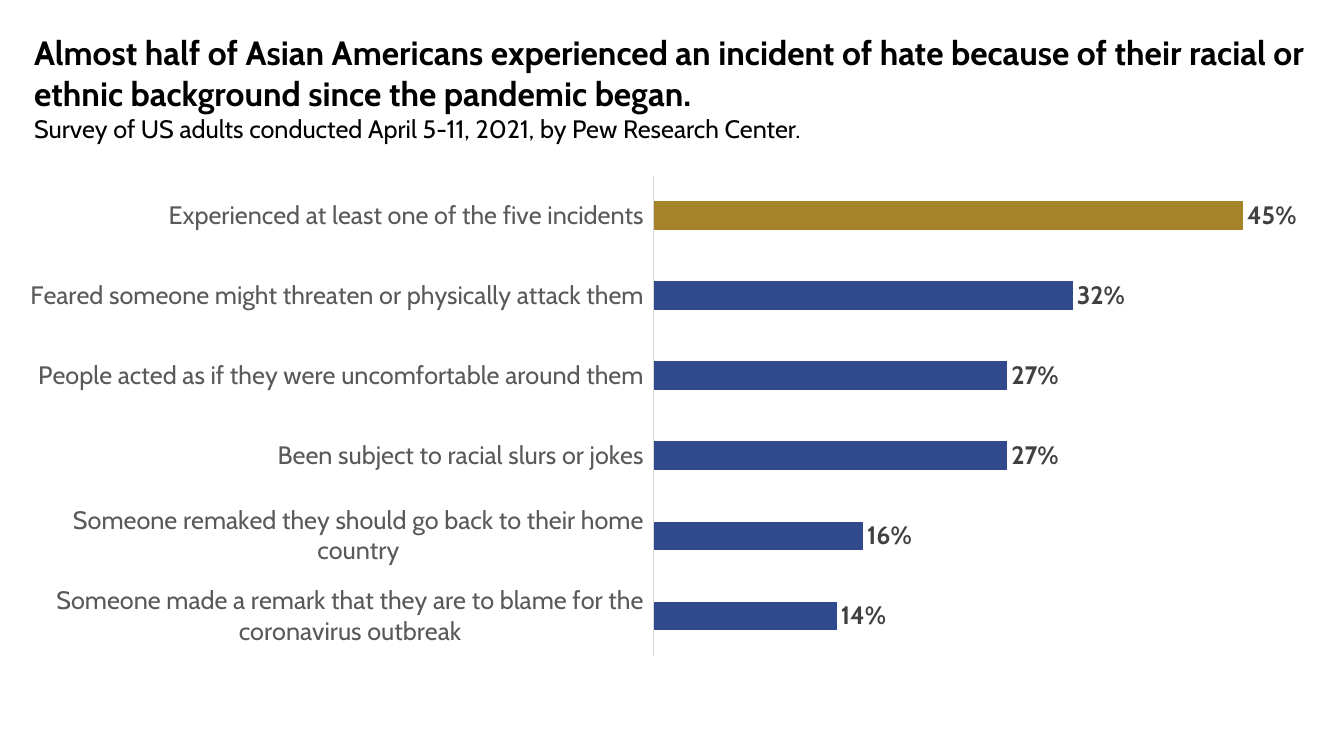
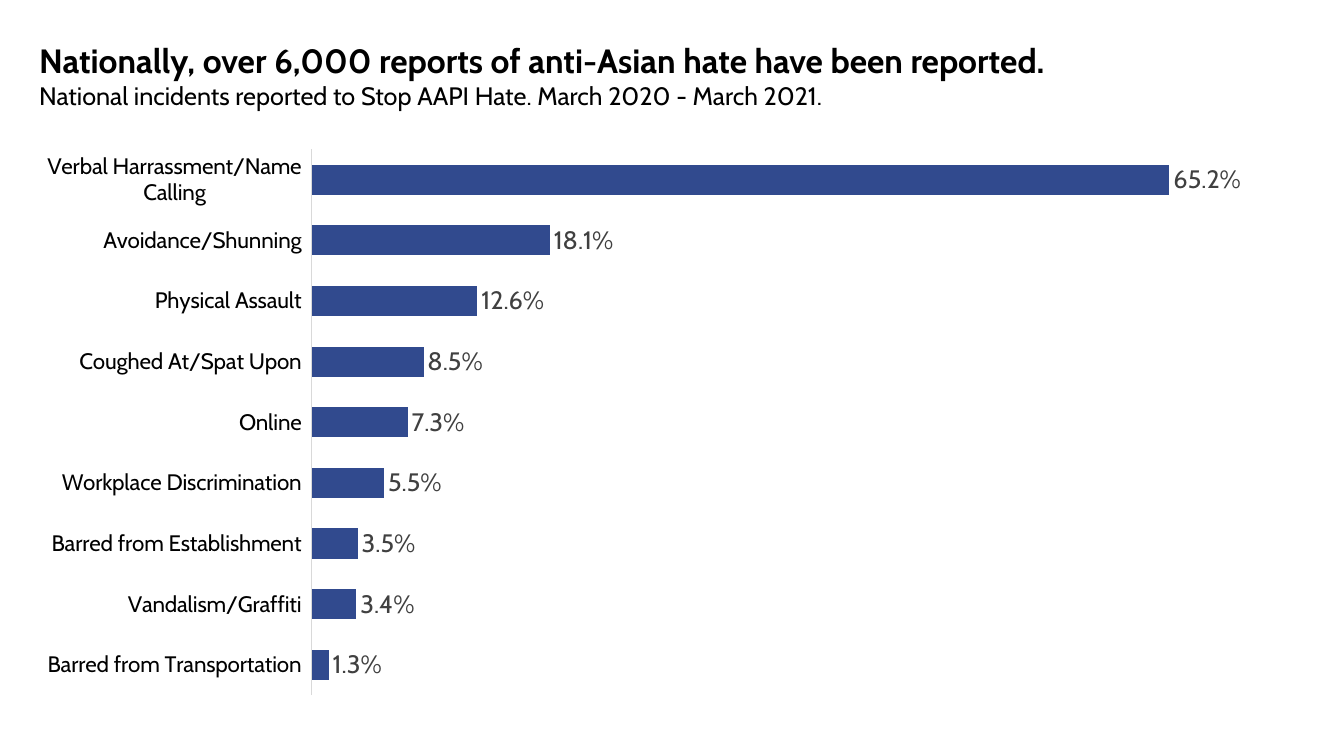
from pptx import Presentation
from pptx.chart.data import CategoryChartData as Data
from pptx.dml.color import RGBColor as RGB
from pptx.enum.chart import XL_CHART_TYPE as Kind
from pptx.enum.chart import XL_LABEL_POSITION as Spot
from pptx.enum.chart import XL_TICK_LABEL_POSITION as Place
from pptx.enum.chart import XL_TICK_MARK as Tick
from pptx.enum.text import MSO_ANCHOR as Anchor
from pptx.oxml import parse_xml
from pptx.oxml.ns import nsdecls, qn
from pptx.util import Inches, Pt

FONT = "Cabin"
COLORS = {
    "black": "000000",
    "gray": "595959",
    "label": "404040",
    "rule": "D9D9D9",
    "blue": "314A8E",
    "gold": "A58328",
}

HATE = [
    ("Experienced at least one of the five incidents", 0.45),
    ("Feared someone might threaten or physically attack them", 0.32),
    ("People acted as if they were uncomfortable around them", 0.27),
    ("Been subject to racial slurs or jokes", 0.27),
    ("Someone remaked they should go back to their home country", 0.16),
    ("Someone made a remark that they are to blame for the "
     "coronavirus outbreak", 0.14),
]
REPORTS = [
    ("Barred from Transportation", 0.013),
    ("Vandalism/Graffiti", 0.034),
    ("Barred from Establishment", 0.035),
    ("Workplace Discrimination", 0.055),
    ("Online", 0.073),
    ("Coughed At/Spat Upon", 0.085),
    ("Physical Assault", 0.126),
    ("Avoidance/Shunning", 0.181),
    ("Verbal Harrassment/Name Calling", 0.652),
]


def color(name):
    return RGB.from_string(COLORS[name])


def style(font, size, tone, bold=False):
    font.name, font.size, font.bold = FONT, Pt(size), bold
    font.color.rgb = color(tone)


def paint(fill, tone):
    fill.solid()
    fill.fore_color.rgb = color(tone)


def add_title(slide, box, head, sub):
    """Bold headline with a lighter source line, set on the box bottom."""
    frame = slide.shapes.add_textbox(*map(Inches, box)).text_frame
    frame.word_wrap = True
    frame.vertical_anchor = Anchor.BOTTOM
    para = frame.paragraphs[0]
    run = para.add_run()
    run.text = head
    style(run.font, 24, "black", True)
    para.add_line_break()
    run = para.add_run()
    run.text = sub
    style(run.font, 18, "black")


def set_plot(chart, plot):
    """Fix the inner plot area as x, y, w, h fractions of the chart."""
    area = chart.element.find(".//" + qn("c:plotArea"))
    for old in area.findall(qn("c:layout")):
        area.remove(old)
    modes = "".join(f'<c:{m}Mode val="edge"/>' for m in "xy")
    sizes = "".join(f'<c:{k} val="{v}"/>' for k, v in zip("xywh", plot))
    area.insert(0, parse_xml(
        f'<c:layout {nsdecls("c")}><c:manualLayout>'
        f'<c:layoutTarget val="inner"/>{modes}{sizes}'
        "</c:manualLayout></c:layout>"))


def add_bars(slide, box, rows, form, top, plot, gap, size, tone, bold=False):
    """Horizontal bars with value labels and no value axis."""
    data = Data(number_format=form)
    data.categories = [name for name, _ in rows]
    data.add_series("Series 1", [value for _, value in rows])
    chart = slide.shapes.add_chart(
        Kind.BAR_CLUSTERED, *map(Inches, box), data).chart
    chart.has_title = chart.has_legend = False
    style(chart.font, 10, "black")
    set_plot(chart, plot)

    # Axes
    cat, val = chart.category_axis, chart.value_axis
    cat.major_tick_mark = cat.minor_tick_mark = Tick.NONE
    cat.tick_label_position = Place.LOW
    style(cat.tick_labels.font, size, tone)
    cat.format.line.color.rgb = color("rule")
    cat.format.line.width = Pt(0.75)
    val.minimum_scale, val.maximum_scale = 0, top
    val.has_major_gridlines = False
    val.visible = False

    # Bars and labels
    bars = chart.plots[0]
    bars.gap_width = gap
    bars.vary_by_categories = False
    paint(bars.series[0].format.fill, "blue")
    bars.has_data_labels = True
    tags = bars.data_labels
    tags.show_value = True
    tags.position = Spot.OUTSIDE_END
    tags.number_format, tags.number_format_is_linked = form, False
    style(tags.font, 18, "label", bold)
    return chart


def add_survey(slide):
    add_title(
        slide, (0.24, 0.31, 12.84, 1.16),
        "Almost half of Asian Americans experienced an incident of hate "
        "because of their racial or ethnic background since the pandemic "
        "began. ",
        "Survey of US adults conducted April 5-11, 2021, by Pew Research "
        "Center.")
    chart = add_bars(
        slide, (0.24, 1.59, 12.74, 5.07), HATE, "0%", 0.5,
        (0.49, 0.03, 0.51, 0.94), 182, 18, "gray", True)
    chart.category_axis.reverse_order = True
    bars = chart.plots[0]
    bars.overlap = -71
    paint(bars.series[0].points[0].format.fill, "gold")


def add_reports(slide):
    add_title(
        slide, (0.29, 0.39, 12.84, 0.76),
        "Nationally, over 6,000 reports of anti-Asian hate have been "
        "reported.",
        "National incidents reported to Stop AAPI Hate. March 2020 - "
        "March 2021.")
    add_bars(
        slide, (0.29, 1.37, 12.18, 5.64), REPORTS, "0.0%", 0.7,
        (0.23, 0.02, 0.75, 0.96), 101, 16, "black")


def main():
    deck = Presentation()
    deck.slide_width, deck.slide_height = Inches(13.33), Inches(7.5)
    blank = deck.slide_layouts[6]
    for build in (add_survey, add_reports):
        build(deck.slides.add_slide(blank))
    deck.save("out.pptx")


if __name__ == "__main__":
    main()
